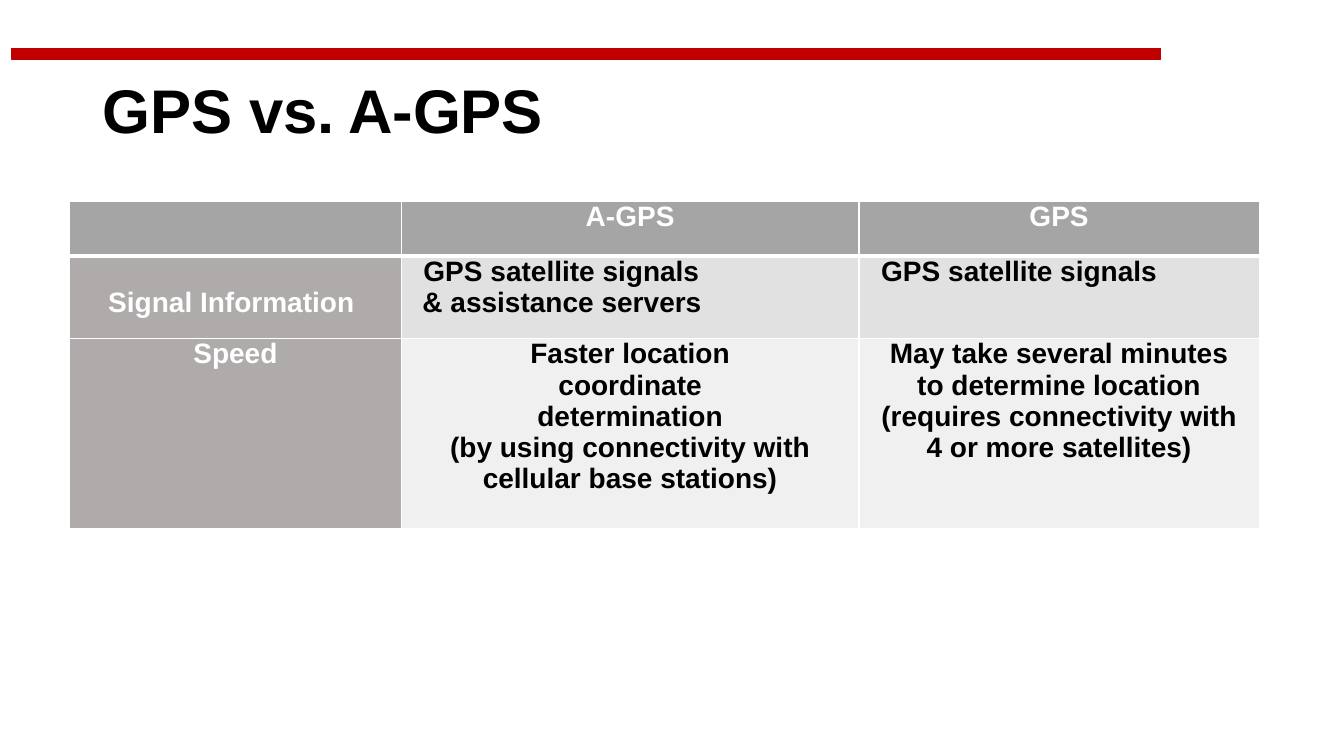
from dataclasses import dataclass

from lxml.etree import SubElement
from pptx import Presentation
from pptx.dml.color import RGBColor
from pptx.enum.shapes import MSO_SHAPE as Shape
from pptx.enum.text import MSO_ANCHOR as Anchor, MSO_AUTO_SIZE as AutoSize, PP_ALIGN as Align
from pptx.oxml.ns import qn
from pptx.util import Emu, Pt

PX = 9144  # 100 px to the inch

WHITE = RGBColor(0xFF, 0xFF, 0xFF)
BLACK = RGBColor(0x00, 0x00, 0x00)
RED = RGBColor(0xC0, 0x00, 0x00)
HEADER_GRAY = RGBColor(0xA5, 0xA5, 0xA5)
LABEL_GRAY = RGBColor(0xAF, 0xAB, 0xAB)
BAND_DARK = RGBColor(0xE1, 0xE1, 0xE1)
BAND_LIGHT = RGBColor(0xF0, 0xF0, 0xF0)

TITLE_FONT = {"name": "Arial", "size": Pt(44), "bold": True}
CELL_FONT = {"name": "Arial", "size": Pt(20), "bold": True}

COLUMN_WIDTHS = (329, 454, 397)
ROW_HEIGHTS = (54, 82, 188)


@dataclass(frozen=True)
class Line:
    text: str
    left: int = 0
    right: int = 0
    align: Align = Align.CENTER


@dataclass(frozen=True)
class Entry:
    fill: RGBColor
    lines: tuple[Line, ...] = ()
    color: RGBColor = BLACK
    top: int = 0


SIGNALS = Line("GPS satellite signals", 22, align=Align.LEFT)

ROWS = (
    (
        Entry(HEADER_GRAY),
        Entry(HEADER_GRAY, (Line("A-GPS"),), WHITE),
        Entry(HEADER_GRAY, (Line("GPS"),), WHITE),
    ),
    (
        Entry(LABEL_GRAY, (Line("Signal Information", right=8),), WHITE, top=31),
        Entry(BAND_DARK, (SIGNALS, Line("& assistance servers", 21, align=Align.LEFT))),
        Entry(BAND_DARK, (SIGNALS,)),
    ),
    (
        Entry(LABEL_GRAY, (Line("Speed"),), WHITE),
        Entry(BAND_LIGHT, (
            Line("Faster location coordinate determination", 64, 64),
            Line("(by using connectivity with cellular base stations)", 11, 11),
        )),
        Entry(BAND_LIGHT, (
            Line("May take several minutes to determine location", 18, 18),
            Line("(requires connectivity with 4 or more satellites)", 14, 14),
        )),
    ),
)


def px(length: int) -> Emu:
    return Emu(length * PX)


def apply(target, values: dict) -> None:
    for name, value in values.items():
        setattr(target, name, value)


def place(shape, left: int, top: int, width: int, height: int) -> None:
    apply(shape, {"left": px(left), "top": px(top), "width": px(width), "height": px(height)})


def add_bar(page) -> None:
    bar = page.shapes.add_shape(Shape.RECTANGLE, px(12), px(48), px(1139), px(11))
    bar.shadow.inherit = False
    bar.fill.solid()
    bar.fill.fore_color.rgb = RED
    bar.line.color.rgb = RED
    bar.line.width = Pt(1)


def format_title(page) -> None:
    title = page.shapes.title
    place(title, 92, 40, 1150, 145)
    frame = title.text_frame
    apply(frame, {"text": "GPS vs. A-GPS", "word_wrap": True,
                  "auto_size": AutoSize.NONE, "vertical_anchor": Anchor.MIDDLE})
    para = frame.paragraphs[0]
    apply(para, {"alignment": Align.LEFT, "line_spacing": 0.9})
    span = para.runs[0]
    apply(span.font, TITLE_FONT)
    span.font.color.rgb = BLACK
    span.font._element.set("spc", "-20")


def add_borders(cell, top: int, bottom: int) -> None:
    properties = cell._tc.get_or_add_tcPr()
    for side, points in (("L", 1), ("R", 1), ("T", top), ("B", bottom)):
        border = SubElement(properties, qn(f"a:ln{side}"), w=str(Pt(points)))
        fill = SubElement(border, qn("a:solidFill"))
        SubElement(fill, qn("a:srgbClr"), val=str(WHITE))


def fill_cell(cell, entry: Entry) -> None:
    apply(cell, {"margin_left": 0, "margin_right": 0,
                 "margin_top": px(entry.top), "margin_bottom": 0})
    cell.fill.solid()
    cell.fill.fore_color.rgb = entry.fill
    frame = cell.text_frame
    for index, line in enumerate(entry.lines):
        para = frame.add_paragraph() if index else frame.paragraphs[0]
        para.alignment = line.align
        indents = para._p.get_or_add_pPr()
        indents.set("marL", str(px(line.left)))
        indents.set("marR", str(px(line.right)))
        span = para.add_run()
        span.text = line.text
        apply(span.font, CELL_FONT)
        span.font.color.rgb = entry.color


def add_comparison(page) -> None:
    table = page.shapes.add_table(
        len(ROW_HEIGHTS), len(COLUMN_WIDTHS), px(69), px(200),
        px(sum(COLUMN_WIDTHS)), px(sum(ROW_HEIGHTS))).table
    for column, width in zip(table.columns, COLUMN_WIDTHS):
        column.width = px(width)
    for row, height in zip(table.rows, ROW_HEIGHTS):
        row.height = px(height)
    for row_index, entries in enumerate(ROWS):
        # The rule under the header row is thicker
        top = 3 if row_index == 1 else 1
        bottom = 3 if row_index == 0 else 1
        for column_index, entry in enumerate(entries):
            cell = table.cell(row_index, column_index)
            add_borders(cell, top, bottom)
            fill_cell(cell, entry)


def main() -> None:
    deck = Presentation()
    apply(deck, {"slide_width": px(1333), "slide_height": px(750)})
    page = deck.slides.add_slide(deck.slide_layouts.get_by_name("Title Only"))

    # Heading
    add_bar(page)
    format_title(page)

    # Comparison table
    add_comparison(page)

    deck.save("out.pptx")


if __name__ == "__main__":
    main()
